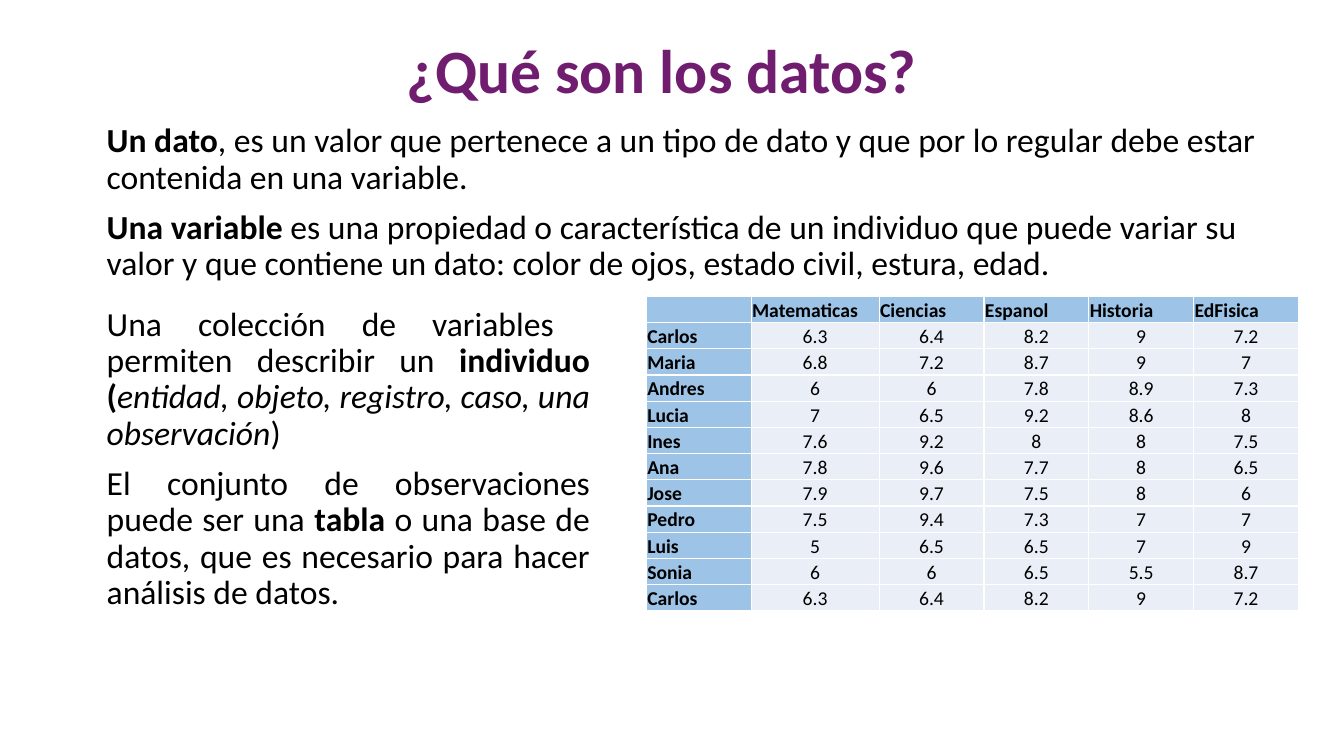
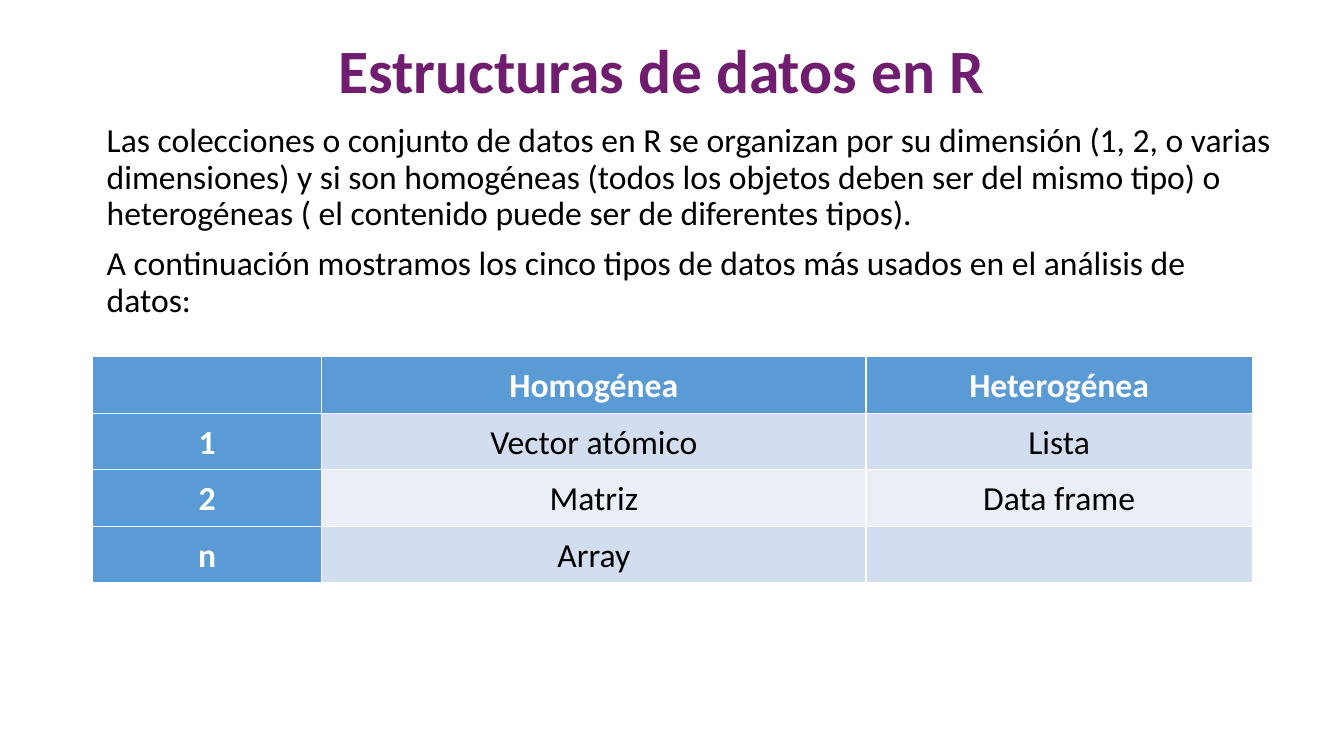
import pptx
import pptx.util
import pptx.dml.color
import pptx.enum.text

PX = 9144  # 100 px to the inch
FONT = "Calibri"
HUES = {
    "title": "701C6F",
    "text": "000000",
    "white": "FFFFFF",
    "label": "9DC3E6",
    "head": "5B9BD5",
    "dark": "D2DEEF",
    "light": "EAEFF7",
}
ALIGN = pptx.enum.text.PP_ALIGN
ANCHOR = pptx.enum.text.MSO_ANCHOR


def style(para, size, hue, bold=None, align=ALIGN.LEFT, space=0.9):
    para.alignment = align
    para.line_spacing = space
    font = para.font
    font.name = FONT
    font.size = pptx.util.Pt(size)
    font.bold = bold
    font.color.rgb = pptx.dml.color.RGBColor.from_string(HUES[hue])


def write(slide, area, paras, size=24, hue="text", bold=None, align=ALIGN.LEFT):
    """Each paragraph is a list of (text, mark); mark is "b", "i" or empty."""
    frame = slide.shapes.add_textbox(*[n * PX for n in area]).text_frame
    frame.word_wrap = True
    for i, runs in enumerate(paras):
        para = frame.add_paragraph() if i else frame.paragraphs[0]
        style(para, size, hue, bold, align)
        if i:
            para.space_before = pptx.util.Pt(10)
        for text, mark in runs:
            run = para.add_run()
            run.text = text
            if mark == "b":
                run.font.bold = True
            elif mark == "i":
                run.font.italic = True
    return frame


# Content
marks = [
    ["", "Matematicas", "Ciencias", "Espanol", "Historia", "EdFisica"],
    ["Carlos", "6.3", "6.4", "8.2", "9", "7.2"],
    ["Maria", "6.8", "7.2", "8.7", "9", "7"],
    ["Andres", "6", "6", "7.8", "8.9", "7.3"],
    ["Lucia", "7", "6.5", "9.2", "8.6", "8"],
    ["Ines", "7.6", "9.2", "8", "8", "7.5"],
    ["Ana", "7.8", "9.6", "7.7", "8", "6.5"],
    ["Jose", "7.9", "9.7", "7.5", "8", "6"],
    ["Pedro", "7.5", "9.4", "7.3", "7", "7"],
    ["Luis", "5", "6.5", "6.5", "7", "9"],
    ["Sonia", "6", "6", "6.5", "5.5", "8.7"],
    ["Carlos", "6.3", "6.4", "8.2", "9", "7.2"],
]
kinds = [
    ["", "Homogénea", "Heterogénea"],
    ["1", "Vector atómico", "Lista"],
    ["2", "Matriz", "Data frame"],
    ["n", "Array", ""],
]
pages = [
    {
        "title": "¿Qué son los datos?",
        "intro": [
            [("Un dato", "b"),
             (", es un valor que pertenece a un tipo de dato y que por lo regular "
              "debe estar contenida en una variable.", "")],
            [("Una variable ", "b"),
             ("es una propiedad o característica de un individuo que puede variar su "
              "valor y que contiene un dato: color de ojos, estado civil, estura, edad.", "")],
        ],
        "side": [
            [("Una colección de variables  permiten describir un ", ""),
             ("individuo (", "b"),
             ("entidad, objeto, registro, caso, una observación", "i"),
             (")", "")],
            [("El conjunto de observaciones puede ser una ", ""),
             ("tabla", "b"),
             (" o una base de datos, que es necesario para hacer análisis de datos.", "")],
        ],
        "table": {
            "rows": marks, "left": 641, "top": 294, "high": 26,
            "wide": [104, 127, 104, 104, 104, 104],
            "size": 14, "space": 1, "inset": (1, 1, 1, 0),
            "anchor": ANCHOR.BOTTOM, "align": ALIGN.LEFT,
            "fill": "label", "hue": "text", "bands": ["light"], "rule": False,
        },
    },
    {
        "title": "Estructuras de datos en R",
        "intro": [
            [("Las colecciones o conjunto de datos en R se organizan por su dimensión "
              "(1, 2, o varias dimensiones) y si son homogéneas (todos los objetos deben "
              "ser del mismo tipo) o heterogéneas ( el contenido puede ser de diferentes "
              "tipos).", "")],
            [("A continuación mostramos los cinco tipos de datos más usados en el "
              "análisis de datos:", "")],
        ],
        "side": [],
        "table": {
            "rows": kinds, "left": 92, "top": 354, "high": 56,
            "wide": [227, 540, 383],
            "size": 24, "space": 1.07, "inset": (14, 6, 14, 6),
            "anchor": ANCHOR.MIDDLE, "align": ALIGN.CENTER,
            "fill": "head", "hue": "white", "bands": ["dark", "light"], "rule": True,
        },
    },
]

deck = pptx.Presentation()
deck.slide_width = 1333 * PX
deck.slide_height = 750 * PX

for page in pages:
    slide = deck.slides.add_slide(deck.slide_layouts[6])

    # Title and text
    frame = write(slide, (173, 0, 967, 145), [[(page["title"], "")]],
                  44, "title", True, ALIGN.CENTER)
    frame.vertical_anchor = ANCHOR.MIDDLE
    write(slide, (96, 118, 1175, 140), page["intro"])
    if page["side"]:
        write(slide, (96, 300, 499, 320), page["side"], align=ALIGN.JUSTIFY)

    # Table
    spec = page["table"]
    rows, wide, high = spec["rows"], spec["wide"], spec["high"]
    grid = slide.shapes.add_table(
        len(rows), len(wide), spec["left"] * PX, spec["top"] * PX,
        sum(wide) * PX, high * len(rows) * PX).table
    grid.first_row = spec["rule"]  # thick line below the header
    grid.horz_banding = False
    for col, width in zip(grid.columns, wide):
        col.width = width * PX
    for r, row in enumerate(rows):
        grid.rows[r].height = high * PX
        for c, text in enumerate(row):
            cell = grid.cell(r, c)
            label = r == 0 or c == 0
            bands = spec["bands"]
            fill = spec["fill"] if label else bands[(r - 1) % len(bands)]
            cell.fill.solid()
            cell.fill.fore_color.rgb = pptx.dml.color.RGBColor.from_string(HUES[fill])
            (cell.margin_left, cell.margin_top, cell.margin_right,
             cell.margin_bottom) = [n * PX for n in spec["inset"]]
            cell.vertical_anchor = spec["anchor"]
            cell.text = text
            style(cell.text_frame.paragraphs[0], spec["size"],
                  spec["hue"] if label else "text", label,
                  spec["align"] if label else ALIGN.CENTER, spec["space"])

deck.save("out.pptx")
